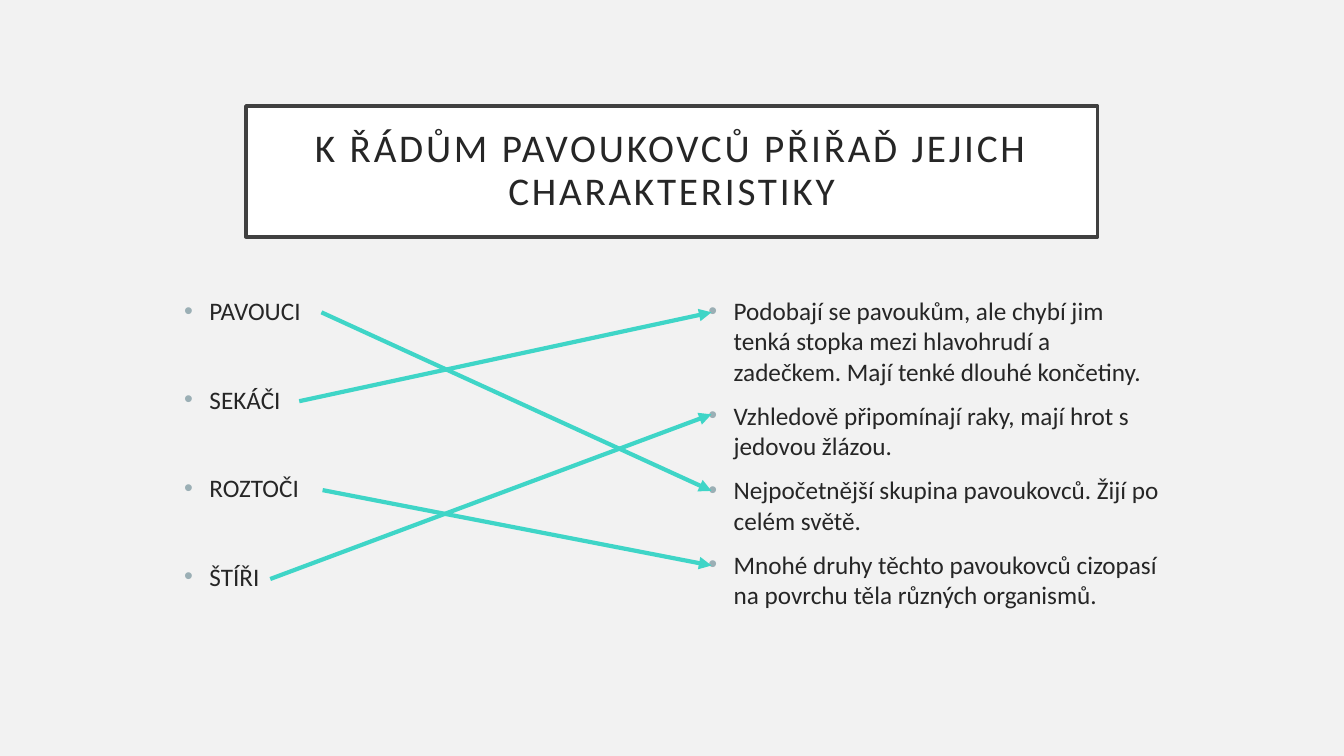
from dataclasses import dataclass

from lxml import etree
from pptx import Presentation
from pptx.dml.color import RGBColor
from pptx.enum.shapes import MSO_CONNECTOR, MSO_SHAPE
from pptx.enum.text import MSO_ANCHOR, PP_ALIGN
from pptx.oxml.ns import qn
from pptx.slide import Slide
from pptx.util import Cm, Pt

RECTANGLE = MSO_SHAPE.RECTANGLE
STRAIGHT = MSO_CONNECTOR.STRAIGHT
MIDDLE = MSO_ANCHOR.MIDDLE
CENTER = PP_ALIGN.CENTER
LEFT = PP_ALIGN.LEFT


@dataclass(frozen=True)
class Theme:
    font: str = "Calibri"
    background: RGBColor = RGBColor(0xF2, 0xF2, 0xF2)
    title_fill: RGBColor = RGBColor(0xFF, 0xFF, 0xFF)
    title_border: RGBColor = RGBColor(0x40, 0x40, 0x40)
    text: RGBColor = RGBColor(0x26, 0x26, 0x26)
    arrow: RGBColor = RGBColor(0x3F, 0xD5, 0xC7)
    bullet: str = "9BAFB5"
    title_size: float = 28
    body_size: float = 18
    title_spacing: str = "200"


@dataclass(frozen=True)
class Trait:
    text: str
    arrow_y: float


@dataclass(frozen=True)
class Order:
    name: str
    arrow_x: float
    trait: Trait


THEME = Theme()
TITLE = "K ŘÁDŮM PAVOUKOVCŮ PŘIŘAĎ JEJICH CHARAKTERISTIKY"

HARVESTMEN = Trait(
    "Podobají se pavoukům, ale chybí jim tenká stopka mezi hlavohrudí a "
    "zadečkem. Mají tenké dlouhé končetiny.", 7.87)
SCORPIONS = Trait("Vzhledově připomínají raky, mají hrot s jedovou žlázou.", 10.44)
SPIDERS = Trait("Nejpočetnější skupina pavoukovců. Žijí po celém světě.", 12.37)
MITES = Trait(
    "Mnohé druhy těchto pavoukovců cizopasí na povrchu těla různých organismů.",
    14.25)
TRAITS = [HARVESTMEN, SCORPIONS, SPIDERS, MITES]
ORDERS = [
    Order("PAVOUCI", 8.1, SPIDERS),
    Order("SEKÁČI", 7.54, HARVESTMEN),
    Order("ROZTOČI", 8.13, MITES),
    Order("ŠTÍŘI", 6.81, SCORPIONS),
]

ORDERS_LEFT, TRAITS_LEFT = 4.39, 17.6
LIST_TOP, LIST_WIDTH, LIST_HEIGHT = 7.32, 11.86, 8.61
FIRST_ORDER_Y, ORDER_PITCH = 7.87, 2.24
ARROW_END_X = 17.93
ORDER_GAP, TRAIT_GAP = 41.6, 10
BULLET_INDENT = Cm(0.64)


def add_title(slide: Slide) -> None:
    title = slide.shapes.add_shape(RECTANGLE, Cm(6.2), Cm(2.67), Cm(21.46), Cm(3.3))
    title.shadow.inherit = False
    title.fill.solid()
    title.fill.fore_color.rgb = THEME.title_fill
    title.line.color.rgb = THEME.title_border
    title.line.width = Pt(2.5)
    frame = title.text_frame
    frame.word_wrap = True
    frame.vertical_anchor = MIDDLE
    frame.margin_left = frame.margin_right = Cm(0.51)
    frame.margin_top = frame.margin_bottom = Cm(0.51)
    heading = frame.paragraphs[0]
    heading.text = TITLE
    heading.alignment = CENTER
    heading.line_spacing = 0.9
    heading.font.name = THEME.font
    heading.font.size = Pt(THEME.title_size)
    heading.font.color.rgb = THEME.text
    heading._p.pPr.find(qn("a:defRPr")).set("spc", THEME.title_spacing)


def add_bullet_list(slide: Slide, left: float, items: list[str], gap: float) -> None:
    frame = slide.shapes.add_textbox(
        Cm(left), Cm(LIST_TOP), Cm(LIST_WIDTH), Cm(LIST_HEIGHT)).text_frame
    frame.word_wrap = True
    for index, item in enumerate(items):
        entry = frame.add_paragraph() if index else frame.paragraphs[0]
        entry.text = item
        entry.alignment = LEFT
        if index:
            entry.space_before = Pt(gap)
        properties = entry._p.get_or_add_pPr()
        properties.set("marL", str(BULLET_INDENT))
        properties.set("indent", str(-BULLET_INDENT))
        bullet_color = etree.SubElement(properties, qn("a:buClr"))
        etree.SubElement(bullet_color, qn("a:srgbClr"), val=THEME.bullet)
        etree.SubElement(properties, qn("a:buFont"), typeface="Arial")
        etree.SubElement(properties, qn("a:buChar"), char="•")
        entry.font.name = THEME.font
        entry.font.size = Pt(THEME.body_size)
        entry.font.color.rgb = THEME.text


def add_match_arrow(slide: Slide, order: Order, start_y: float) -> None:
    arrow = slide.shapes.add_connector(
        STRAIGHT, Cm(order.arrow_x), Cm(start_y),
        Cm(ARROW_END_X), Cm(order.trait.arrow_y))
    arrow.line.color.rgb = THEME.arrow
    arrow.line.width = Pt(3)
    etree.SubElement(arrow.line._get_or_add_ln(), qn("a:tailEnd"), type="triangle")
    etree.SubElement(arrow._element.spPr, qn("a:effectLst"))


def main() -> None:
    presentation = Presentation()
    presentation.slide_width = Cm(33.87)
    presentation.slide_height = Cm(19.05)
    slide = presentation.slides.add_slide(presentation.slide_layouts[6])
    slide.background.fill.solid()
    slide.background.fill.fore_color.rgb = THEME.background
    add_title(slide)
    add_bullet_list(slide, ORDERS_LEFT, [order.name for order in ORDERS], ORDER_GAP)
    add_bullet_list(slide, TRAITS_LEFT, [trait.text for trait in TRAITS], TRAIT_GAP)
    for row, order in enumerate(ORDERS):
        add_match_arrow(slide, order, FIRST_ORDER_Y + row * ORDER_PITCH)
    presentation.save("out.pptx")


if __name__ == "__main__":
    main()
